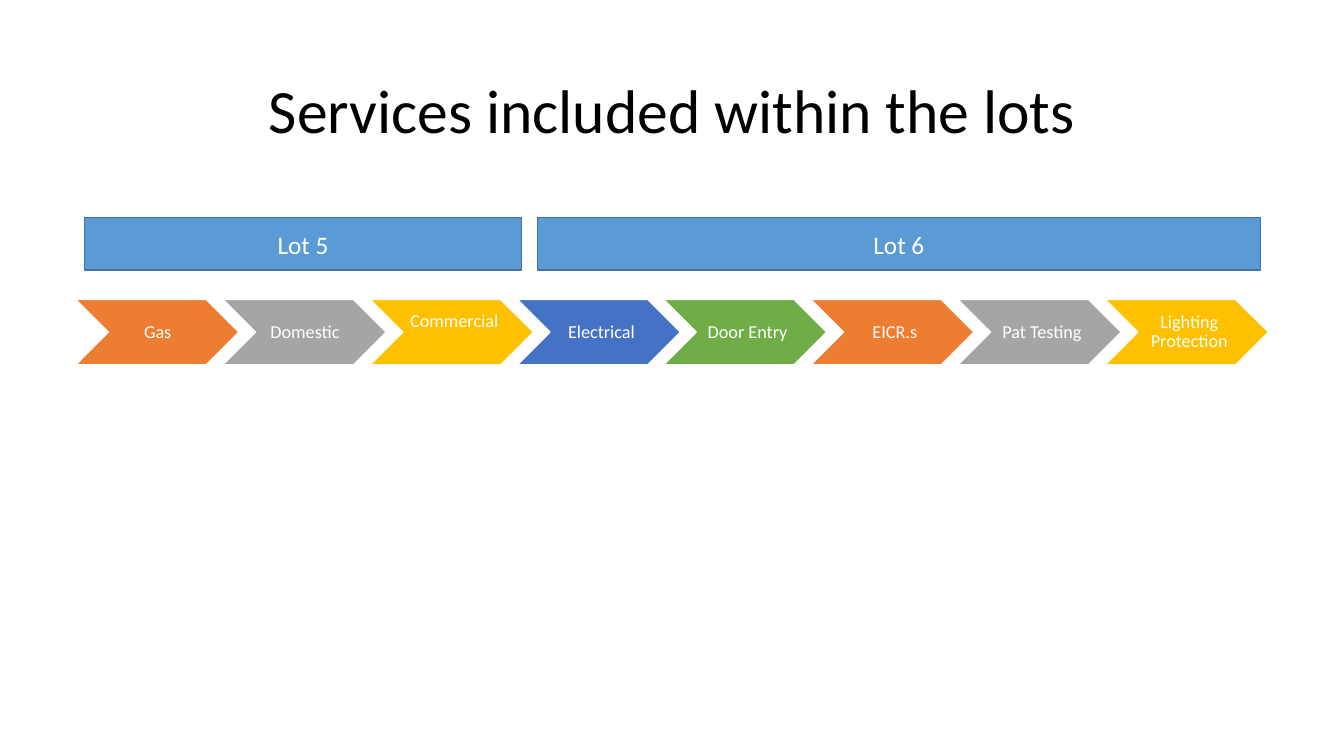
import dataclasses

import pptx
import pptx.dml.color
import pptx.enum.shapes
import pptx.enum.text
import pptx.util

EMU_PER_PX = 9144
SHAPES = pptx.enum.shapes.MSO_SHAPE
FONT = "Calibri"
WHITE = "FFFFFF"
BLACK = "000000"
LOT_FILL = "5B9BD5"
LOT_LINE = "43739E"
STEP_FILLS = ["ED7D31", "A5A5A5", "FFC000", "4472C4", "70AD47"]
FIRST_STEP_LEFT = 75
LAST_STEP_LEFT = 1096
STEP_TOP = 297
STEP_WIDTH = 162
STEP_HEIGHT = 65
LABEL_INDENT = 33
LABEL_WIDTH = 97


@dataclasses.dataclass
class Area:
    left: int
    top: int
    width: int
    height: int


@dataclasses.dataclass
class Lot:
    name: str
    area: Area


@dataclasses.dataclass
class Service:
    name: str
    bottom_inset: int = 2


LOTS = [
    Lot("Lot 5", Area(84, 216, 433, 52)),
    Lot("Lot 6", Area(533, 216, 717, 52)),
]
SERVICES = [
    Service("Gas "),
    Service("Domestic "),
    Service("Commercial", bottom_inset=22),
    Service("Electrical"),
    Service("Door Entry"),
    Service("EICR.s"),
    Service("Pat Testing"),
    Service("Lighting Protection"),
]


def px(length: int) -> pptx.util.Emu:
    return pptx.util.Emu(length * EMU_PER_PX)


def color(value: str) -> pptx.dml.color.RGBColor:
    return pptx.dml.color.RGBColor.from_string(value)


def bounds(area: Area) -> list:
    return [px(area.left), px(area.top), px(area.width), px(area.height)]


def write(box, text: str, size: int, text_color: str, spacing: float = 1.0) -> None:
    frame = box.text_frame
    frame.text = text
    frame.word_wrap = True
    frame.vertical_anchor = pptx.enum.text.MSO_ANCHOR.MIDDLE
    para = frame.paragraphs[0]
    para.alignment = pptx.enum.text.PP_ALIGN.CENTER
    para.line_spacing = spacing
    span = para.runs[0]
    span.font.name = FONT
    span.font.size = pptx.util.Pt(size)
    span.font.color.rgb = color(text_color)


def add_shape(page, kind, area: Area, fill: str, line: str):
    shape = page.shapes.add_shape(kind, *bounds(area))
    shape.shadow.inherit = False
    shape.fill.solid()
    shape.fill.fore_color.rgb = color(fill)
    shape.line.color.rgb = color(line)
    shape.line.width = pptx.util.Pt(1)
    return shape


def add_title(page, text: str) -> None:
    box = page.shapes.add_textbox(*bounds(Area(92, 40, 1150, 145)))
    write(box, text, 44, BLACK, 0.9)


def add_service(page, service: Service, left: int, fill: str) -> None:
    area = Area(left, STEP_TOP, STEP_WIDTH, STEP_HEIGHT)
    add_shape(page, SHAPES.CHEVRON, area, fill, WHITE)
    label = Area(left + LABEL_INDENT, STEP_TOP, LABEL_WIDTH, STEP_HEIGHT)
    box = page.shapes.add_textbox(*bounds(label))
    frame = box.text_frame
    frame.margin_left = px(6)
    frame.margin_top = frame.margin_right = px(2)
    frame.margin_bottom = px(service.bottom_inset)
    write(box, service.name, 13, WHITE, 0.9)


def add_lot(page, lot: Lot) -> None:
    box = add_shape(page, SHAPES.RECTANGLE, lot.area, LOT_FILL, LOT_LINE)
    write(box, lot.name, 18, WHITE)


def main() -> None:
    deck = pptx.Presentation()
    deck.slide_width = px(1333)
    deck.slide_height = px(750)
    page = deck.slides.add_slide(deck.slide_layouts[6])
    add_title(page, "Services included within the lots")
    pitch = (LAST_STEP_LEFT - FIRST_STEP_LEFT) / (len(SERVICES) - 1)
    for index, service in enumerate(SERVICES):
        left = FIRST_STEP_LEFT + round(index * pitch)
        add_service(page, service, left, STEP_FILLS[index % len(STEP_FILLS)])
    for lot in LOTS:
        add_lot(page, lot)
    deck.save("out.pptx")


if __name__ == "__main__":
    main()
